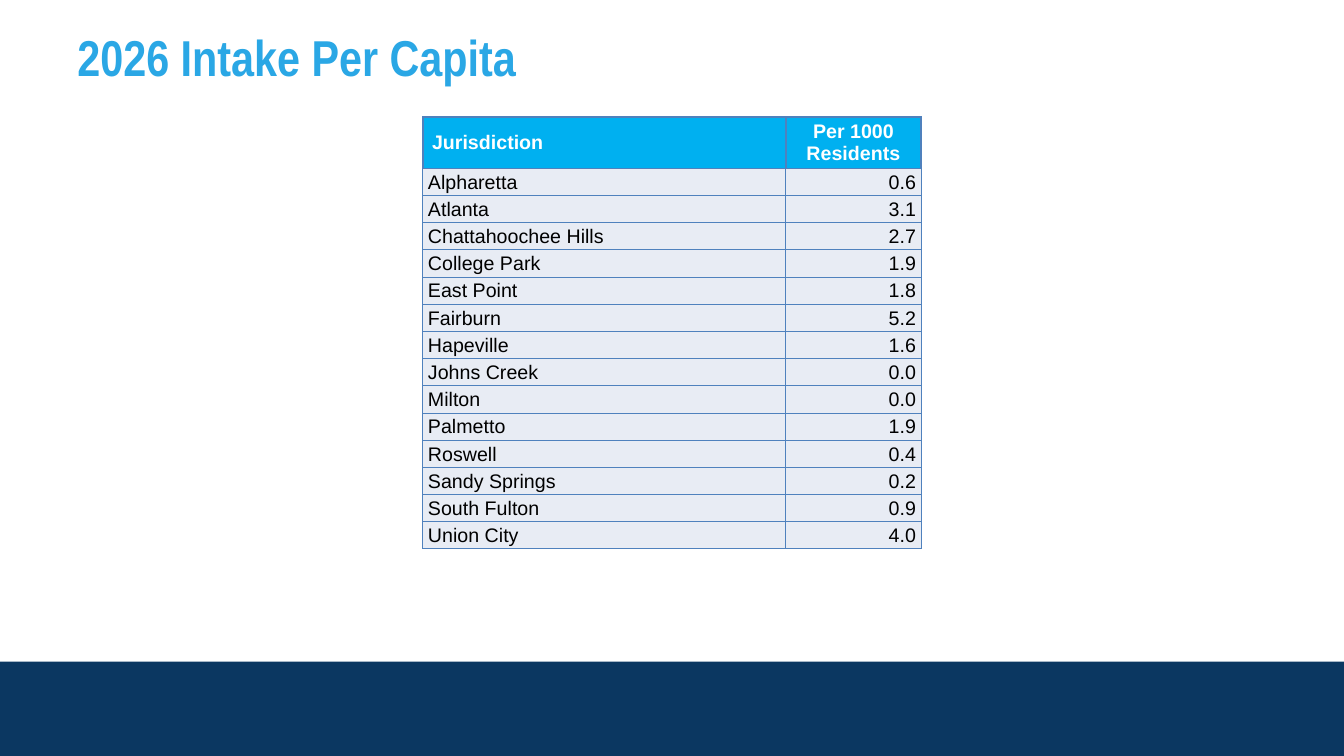
from dataclasses import dataclass

from lxml import etree
from pptx import Presentation
from pptx import util as u
from pptx.dml.color import RGBColor
from pptx.enum import shapes, text
from pptx.oxml.ns import qn


@dataclass(frozen=True)
class Theme:
    title: str = "2AA7E5"
    band: str = "0B3761"
    header_fill: str = "00B0F0"
    row_fill: str = "E8ECF4"
    border: str = "4F81BD"
    light: str = "FFFFFF"
    dark: str = "000000"
    title_font: str = "Arial Narrow"
    table_font: str = "Arial"
    title_size: int = 36
    table_size: int = 14


THEME = Theme()
WIDTH, HEIGHT = u.Inches(13.33), u.Inches(7.5)
COLUMNS = (3.6, 1.34)
HEADER_HEIGHT, ROW_HEIGHT = 0.51, 0.27
ALIGN = text.PP_ALIGN

HEADINGS = ("Jurisdiction", "Per 1000 Residents")
INTAKE = (
    ("Alpharetta", "0.6"),
    ("Atlanta", "3.1"),
    ("Chattahoochee Hills", "2.7"),
    ("College Park", "1.9"),
    ("East Point", "1.8"),
    ("Fairburn", "5.2"),
    ("Hapeville", "1.6"),
    ("Johns Creek", "0.0"),
    ("Milton", "0.0"),
    ("Palmetto", "1.9"),
    ("Roswell", "0.4"),
    ("Sandy Springs", "0.2"),
    ("South Fulton", "0.9"),
    ("Union City", "4.0"),
)

# Look of each column: alignment and left, right margins
HEADER_LOOK = ((ALIGN.LEFT, 0.09, 0.09), (ALIGN.CENTER, 0.1, 0.1))
ROW_LOOK = ((ALIGN.LEFT, 0.05, 0.01), (ALIGN.RIGHT, 0.01, 0.05))


def style_text(paragraph, color, align, **font):
    paragraph.alignment = align
    for name, value in font.items():
        setattr(paragraph.font, name, value)
    paragraph.font.color.rgb = RGBColor.from_string(color)


def add_band(slide):
    top = int(HEIGHT * 0.875)
    band = slide.shapes.add_shape(
        shapes.MSO_SHAPE.RECTANGLE, 0, top, WIDTH, HEIGHT - top)
    band.shadow.inherit = False
    band.fill.solid()
    band.fill.fore_color.rgb = RGBColor.from_string(THEME.band)
    band.line.fill.background()


def set_title(slide, words):
    title = slide.shapes.title
    margin = int(WIDTH * 0.05)
    place = {"left": margin, "top": u.Inches(0.28),
             "width": WIDTH - 2 * margin, "height": u.Inches(0.56)}
    for name, value in place.items():
        setattr(title, name, value)
    frame = title.text_frame
    frame.text = words
    frame.auto_size = text.MSO_AUTO_SIZE.NONE
    frame.vertical_anchor = text.MSO_ANCHOR.MIDDLE
    style_text(frame.paragraphs[0], THEME.title, ALIGN.LEFT, bold=True,
               name=THEME.title_font, size=u.Pt(THEME.title_size))


def set_borders(cell, widths):
    properties = cell._tc.get_or_add_tcPr()
    for side, points in zip("LRTB", widths):
        line = etree.SubElement(properties, qn(f"a:ln{side}"), w=str(u.Pt(points)))
        fill = etree.SubElement(line, qn("a:solidFill"))
        etree.SubElement(fill, qn("a:srgbClr"), val=THEME.border)


def fill_cell(cell, words, look, fill, color, bold, borders):
    align, left, right = look
    set_borders(cell, borders)  # borders come before the fill in the XML
    cell.fill.solid()
    cell.fill.fore_color.rgb = RGBColor.from_string(fill)
    cell.text = words
    layout = {"vertical_anchor": text.MSO_ANCHOR.MIDDLE,
              "margin_left": u.Inches(left), "margin_right": u.Inches(right),
              "margin_top": u.Inches(0.01), "margin_bottom": 0}
    for name, value in layout.items():
        setattr(cell, name, value)
    style_text(cell.text_frame.paragraphs[0], color, align, bold=bold,
               name=THEME.table_font, size=u.Pt(THEME.table_size))


def add_intake_table(slide):
    heights = [HEADER_HEIGHT] + [ROW_HEIGHT] * len(INTAKE)
    width = u.Inches(sum(COLUMNS))
    table = slide.shapes.add_table(
        len(heights), len(COLUMNS), (WIDTH - width) // 2, u.Inches(1.16),
        width, u.Inches(sum(heights))).table
    for column, inches in zip(table.columns, COLUMNS):
        column.width = u.Inches(inches)
    for row, inches in zip(table.rows, heights):
        row.height = u.Inches(inches)

    # Header row, then one row for each jurisdiction
    header = (THEME.header_fill, THEME.light, True, (1, 1, 1, 0.75))
    body = (THEME.row_fill, THEME.dark, False, (0.75,) * 4)
    for index, record in enumerate((HEADINGS, *INTAKE)):
        looks, style = (ROW_LOOK, body) if index else (HEADER_LOOK, header)
        for cell, words, look in zip(table.rows[index].cells, record, looks):
            fill_cell(cell, words, look, *style)


def main():
    deck = Presentation()
    deck.slide_width, deck.slide_height = WIDTH, HEIGHT
    slide = deck.slides.add_slide(deck.slide_layouts.get_by_name("Title Only"))
    add_band(slide)
    set_title(slide, "2026 Intake Per Capita")
    add_intake_table(slide)
    deck.save("out.pptx")


if __name__ == "__main__":
    main()
